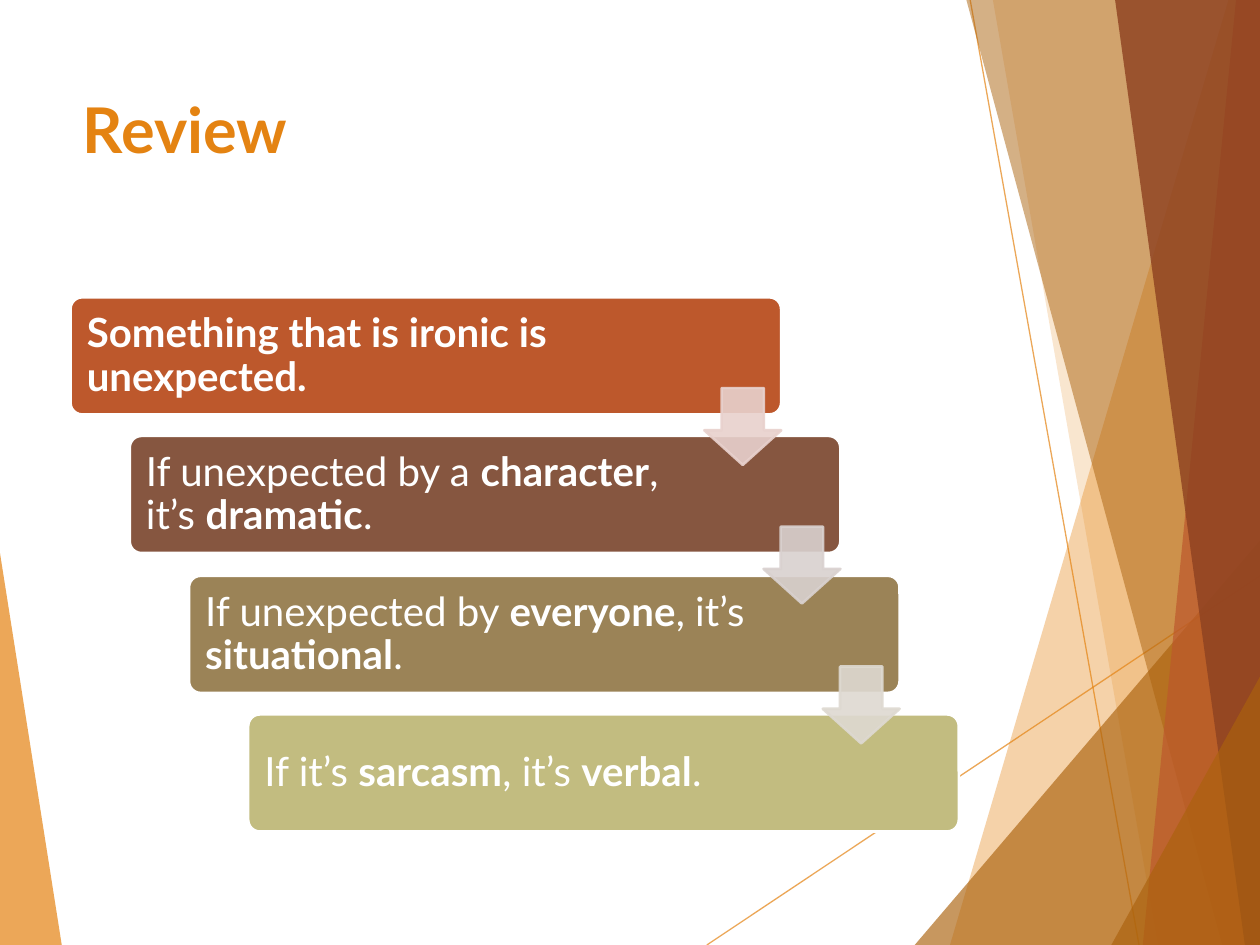
from dataclasses import dataclass

from lxml import etree
from pptx import Presentation
from pptx.dml.color import RGBColor
from pptx.enum.shapes import MSO_CONNECTOR, MSO_SHAPE
from pptx.enum.text import MSO_ANCHOR
from pptx.oxml.ns import qn
from pptx.util import Emu, Pt

PX = 9144  # 100 px to the inch
WIDTH, HEIGHT = 1000, 750
FONT = "Lato"

ROUNDED = MSO_SHAPE.ROUNDED_RECTANGLE
DOWN_ARROW = MSO_SHAPE.DOWN_ARROW
STRAIGHT = MSO_CONNECTOR.STRAIGHT
TOP, MIDDLE = MSO_ANCHOR.TOP, MSO_ANCHOR.MIDDLE

WHITE = RGBColor(0xFF, 0xFF, 0xFF)
ORANGE = RGBColor(0xE4, 0x83, 0x12)
OCHRE = RGBColor(0xAB, 0x62, 0x0D)
RUST = RGBColor(0xBD, 0x58, 0x2C)
DARK_RUST = RGBColor(0x8E, 0x42, 0x21)
BROWN = RGBColor(0x86, 0x56, 0x40)
KHAKI = RGBColor(0x9B, 0x83, 0x57)
OLIVE = RGBColor(0xC2, 0xBC, 0x80)
PALE_RUST = RGBColor(0xE8, 0xD1, 0xCD)
PALE_BROWN = RGBColor(0xD9, 0xD1, 0xCF)
PALE_KHAKI = RGBColor(0xDE, 0xD9, 0xD1)

STEP_X, STEP_Y = 47, 110.3


@dataclass(frozen=True)
class Facet:
    points: tuple[tuple[int, int], ...]
    color: RGBColor
    opacity: int


@dataclass(frozen=True)
class Ray:
    start: tuple[int, int]
    end: tuple[int, int]


@dataclass(frozen=True)
class Step:
    """One stair; every second piece of its text, from the second on, is bold."""
    pieces: tuple[str, ...]
    color: RGBColor
    text_width: int = 451


LEFT_FACET = Facet(((0, 439), (49, 750), (0, 750)), ORANGE, 70)
RAYS = (Ray((561, 750), (1000, 457)), Ray((770, 0), (904, 750)))
RIGHT_FACETS = (
    Facet(((975, 0), (754, 750), (1000, 750), (1000, 0)), ORANGE, 36),
    Facet(((788, 0), (919, 750), (1000, 750), (1000, 0)), ORANGE, 20),
    Facet(((726, 750), (1000, 429), (1000, 750)), OCHRE, 66),
    Facet(((767, 0), (970, 750), (1000, 750), (1000, 0)), OCHRE, 50),
    Facet(((981, 0), (907, 750), (1000, 750), (1000, 0)), RUST, 70),
    Facet(((885, 0), (988, 750), (1000, 750), (1000, 0)), DARK_RUST, 82),
    Facet(((882, 750), (1000, 537), (1000, 750)), OCHRE, 66),
)
STEPS = (
    Step(("", "Something that is ironic is unexpected."), RUST, 455),
    Step(("If unexpected by a ", "character", ", it’s ", "dramatic", "."), BROWN),
    Step(("If unexpected by ", "everyone", ", it’s ", "situational", "."), KHAKI),
    Step(("If it’s ", "sarcasm", ", it’s ", "verbal", "."), OLIVE),
)
ARROW_COLORS = (PALE_RUST, PALE_BROWN, PALE_KHAKI)


def px(value: float) -> Emu:
    return Emu(round(value) * PX)


def set_opacity(shape, percent: int) -> None:
    """Apply one opacity to every fill and line colour of the shape."""
    for color in shape._element.spPr.iter(qn("a:srgbClr")):
        etree.SubElement(color, qn("a:alpha"), val=str(percent * 1000))


def draw_facet(slide, facet: Facet) -> None:
    first, *others = facet.points
    builder = slide.shapes.build_freeform(*first, scale=PX)
    builder.add_line_segments(others, close=True)
    shape = builder.convert_to_shape()
    shape.shadow.inherit = False
    shape.fill.solid()
    shape.fill.fore_color.rgb = facet.color
    shape.line.fill.background()
    set_opacity(shape, facet.opacity)


def draw_ray(slide, ray: Ray) -> None:
    ends = [px(value) for value in ray.start + ray.end]
    connector = slide.shapes.add_connector(STRAIGHT, *ends)
    connector.line.color.rgb = ORANGE
    connector.line.width = Pt(0.75)
    set_opacity(connector, 70)
    etree.SubElement(connector._element.spPr, qn("a:effectLst"))


def draw_preset(slide, kind, box: tuple[float, ...], adjustments: tuple[float, ...],
                fill: RGBColor, line: RGBColor):
    shape = slide.shapes.add_shape(kind, *map(px, box))
    for index, value in enumerate(adjustments):
        shape.adjustments[index] = value
    shape.shadow.inherit = False
    shape.fill.solid()
    shape.fill.fore_color.rgb = fill
    shape.line.color.rgb = line
    shape.line.width = Pt(1.5)
    return shape


def add_text(slide, box: tuple[float, ...], anchor, pieces: tuple[str, ...],
             size: int, color: RGBColor):
    """Add a text box whose odd-numbered pieces are bold."""
    frame = slide.shapes.add_textbox(*map(px, box)).text_frame
    frame.word_wrap = True
    frame.vertical_anchor = anchor
    paragraph = frame.paragraphs[0]
    for index, piece in enumerate(pieces):
        if piece:
            run = paragraph.add_run()
            run.text = piece
            run.font.name = FONT
            run.font.size = Pt(size)
            run.font.bold = index % 2 == 1
            run.font.color.rgb = color
    return frame


def draw_step(slide, step: Step, index: int) -> None:
    left, top = 56 + index * STEP_X, 236 + index * STEP_Y
    draw_preset(slide, ROUNDED, (left, top, 564, 93), (0.1,), step.color, WHITE)
    frame = add_text(slide, (left + 3, top + 3, step.text_width, 88), MIDDLE,
                     step.pieces, 23, WHITE)
    frame.margin_left = frame.margin_right = px(10)
    frame.margin_top = frame.margin_bottom = px(10)
    frame.paragraphs[0].line_spacing = 0.9


def draw_arrow(slide, color: RGBColor, index: int) -> None:
    box = (559 + index * STEP_X, 308 + index * STEP_Y, 61, 61)
    arrow = draw_preset(slide, DOWN_ARROW, box, (0.55, 0.45), color, color)
    set_opacity(arrow, 90)


def main() -> None:
    presentation = Presentation()
    presentation.slide_width, presentation.slide_height = px(WIDTH), px(HEIGHT)
    slide = presentation.slides.add_slide(presentation.slide_layouts[6])

    draw_facet(slide, LEFT_FACET)
    for ray in RAYS:
        draw_ray(slide, ray)
    for facet in RIGHT_FACETS:
        draw_facet(slide, facet)

    add_text(slide, (56, 67, 705, 144), TOP, ("", "Review"), 36, ORANGE)
    for index, step in enumerate(STEPS):
        draw_step(slide, step, index)
    for index, color in enumerate(ARROW_COLORS):
        draw_arrow(slide, color, index)

    presentation.save("out.pptx")


if __name__ == "__main__":
    main()
